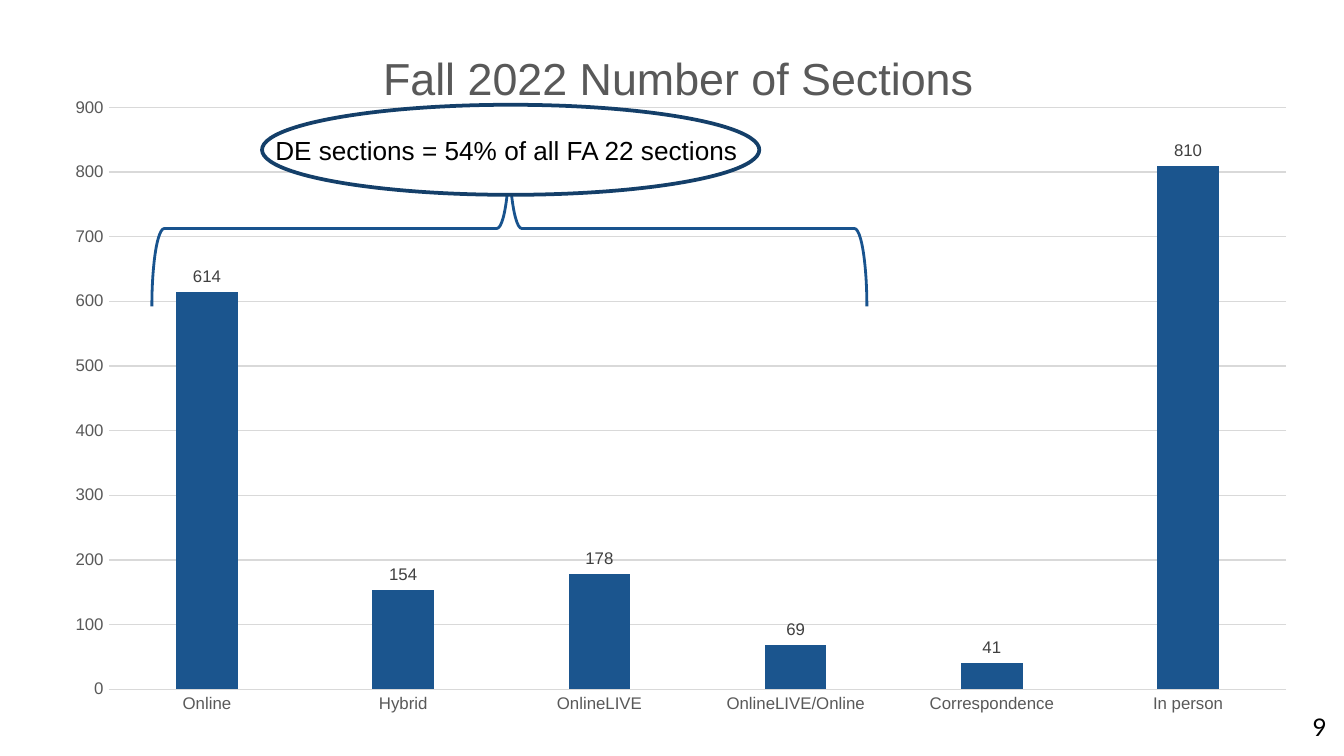
from dataclasses import dataclass

from lxml.etree import SubElement
from pptx import Presentation
from pptx.chart.data import CategoryChartData
from pptx.dml.color import RGBColor
from pptx.enum.chart import XL_CHART_TYPE as ChartType
from pptx.enum.chart import XL_LABEL_POSITION as LabelPosition
from pptx.enum.chart import XL_TICK_MARK as TickMark
from pptx.enum.shapes import MSO_SHAPE as Shape
from pptx.enum.text import MSO_ANCHOR as Anchor
from pptx.enum.text import PP_ALIGN as Align
from pptx.oxml.ns import qn
from pptx.util import Inches, Pt

SECTIONS = {
    "Online": 614,
    "Hybrid": 154,
    "OnlineLIVE": 178,
    "OnlineLIVE/Online": 69,
    "Correspondence": 41,
    "In person": 810,
}
GREY, GRID = "595959", "D9D9D9"


@dataclass
class Area:
    left: float
    top: float
    width: float
    height: float

    def lengths(self) -> list:
        return [Inches(v) for v in (self.left, self.top, self.width, self.height)]


@dataclass
class Outline:
    kind: Shape
    area: Area
    line: str
    weight: float
    fill: str = ""
    rotation: float = 0
    adjustments: tuple = ()


@dataclass
class Label:
    text: str
    area: Area
    size: float
    font: str
    align: Align = Align.LEFT
    anchor: Anchor = Anchor.TOP
    inset: tuple = (0.1, 0.05)


# Chart on the page; plot and title are measured from the chart's corner
CHART = Area(0.34, 0.23, 9.32, 5.13)
PLOT = Area(0.47, 0.57, 8.76, 4.33)
TITLE_LEFT, TITLE_TOP = 2.45, 0.08


def color(value: str) -> RGBColor:
    return RGBColor.from_string(value)


def apply(target, settings: dict) -> None:
    for key, setting in settings.items():
        setattr(target, key, setting)


def set_font(font, size: float, value: str, name: str = "Arial") -> None:
    apply(font, {"size": Pt(size), "name": name, "bold": False})
    font.color.rgb = color(value)


def set_line(line, value: str, weight: float) -> None:
    line.color.rgb = color(value)
    line.width = Pt(weight)


def draw_outline(page, outline: Outline) -> None:
    shape = page.shapes.add_shape(outline.kind, *outline.area.lengths())
    shape.shadow.inherit = False
    shape.rotation = outline.rotation
    for index, value in enumerate(outline.adjustments):
        shape.adjustments[index] = value
    if outline.fill:
        shape.fill.solid()
        shape.fill.fore_color.rgb = color(outline.fill)
    else:
        shape.fill.background()
    set_line(shape.line, outline.line, outline.weight)


def draw_label(page, label: Label) -> None:
    frame = page.shapes.add_textbox(*label.area.lengths()).text_frame
    across, down = (Inches(v) for v in label.inset)
    apply(frame, {
        "word_wrap": True, "vertical_anchor": label.anchor,
        "margin_left": across, "margin_right": across,
        "margin_top": down, "margin_bottom": down,
    })
    para = frame.paragraphs[0]
    para.alignment = label.align
    span = para.add_run()
    span.text = label.text
    set_font(span.font, label.size, "000000", label.font)


def set_layout(parent, index: int, values: dict) -> None:
    """Place a part of the chart by hand, as fractions of the chart."""
    for old in parent.findall(qn("c:layout")):
        parent.remove(old)
    layout = SubElement(parent, qn("c:layout"))
    parent.insert(index, layout)
    manual = SubElement(layout, qn("c:manualLayout"))
    for tag, value in values.items():
        SubElement(manual, qn(f"c:{tag}")).set("val", str(value))


def draw_chart(page) -> None:
    data = CategoryChartData()
    data.categories = list(SECTIONS)
    data.add_series("Series 1", list(SECTIONS.values()))
    chart = page.shapes.add_chart(
        ChartType.COLUMN_CLUSTERED, *CHART.lengths(), data).chart
    set_font(chart.font, 10, "000000")
    chart.has_legend = False
    edges = {"xMode": "edge", "yMode": "edge"}
    set_layout(chart._chartSpace.chart.plotArea, 0, {
        "layoutTarget": "inner", **edges,
        "x": PLOT.left / CHART.width, "y": PLOT.top / CHART.height,
        "w": PLOT.width / CHART.width, "h": PLOT.height / CHART.height,
    })

    # Chart title
    chart.has_title = True
    title = chart.chart_title
    title.include_in_layout = False
    span = title.text_frame.paragraphs[0].add_run()
    span.text = "Fall 2022 Number of Sections"
    set_font(span.font, 24, GREY)
    set_layout(title._element, 1, {
        **edges, "x": TITLE_LEFT / CHART.width, "y": TITLE_TOP / CHART.height,
    })

    # Axes
    for axis in (chart.category_axis, chart.value_axis):
        axis.major_tick_mark = axis.minor_tick_mark = TickMark.NONE
        set_font(axis.tick_labels.font, 9, GREY)
    set_line(chart.category_axis.format.line, GRID, 0.75)
    values = chart.value_axis
    apply(values, {"minimum_scale": 0, "maximum_scale": 900, "major_unit": 100})
    values.format.line.fill.background()
    set_line(values.major_gridlines.format.line, GRID, 0.75)

    # Columns and their values
    plot = chart.plots[0]
    apply(plot, {"gap_width": 219, "overlap": -27, "vary_by_categories": False})
    series = plot.series[0]
    series.format.fill.solid()
    series.format.fill.fore_color.rgb = color("1B558E")
    labels = series.data_labels
    apply(labels, {"show_value": True, "position": LabelPosition.OUTSIDE_END})
    set_font(labels.font, 9, "404040")


def main() -> None:
    # Widescreen page, 16 by 9
    deck = Presentation()
    deck.slide_width = Inches(10)
    deck.slide_height = deck.slide_width * 9 // 16
    page = deck.slides.add_slide(deck.slide_layouts[6])

    # Page number
    draw_label(page, Label("9", Area(9.27, 5.19, 0.6, 0.43), 13, "Lato",
                           Align.RIGHT, Anchor.MIDDLE, (0, 0)))

    draw_chart(page)

    # Brace over the distance education columns, with its callout
    draw_outline(page, Outline(Shape.RIGHT_BRACE, Area(3.21, -0.96, 1.16, 5.32),
                               "18538E", 1.5, rotation=270, adjustments=(0.08, 0.5)))
    draw_outline(page, Outline(Shape.OVAL, Area(1.95, 0.78, 3.7, 0.67),
                               "143F69", 2, fill="FFFFFF"))
    draw_label(page, Label("DE sections = 54% of all FA 22 sections",
                           Area(1.95, 0.95, 3.7, 0.34), 14, "Arial"))

    deck.save("out.pptx")


if __name__ == "__main__":
    main()
